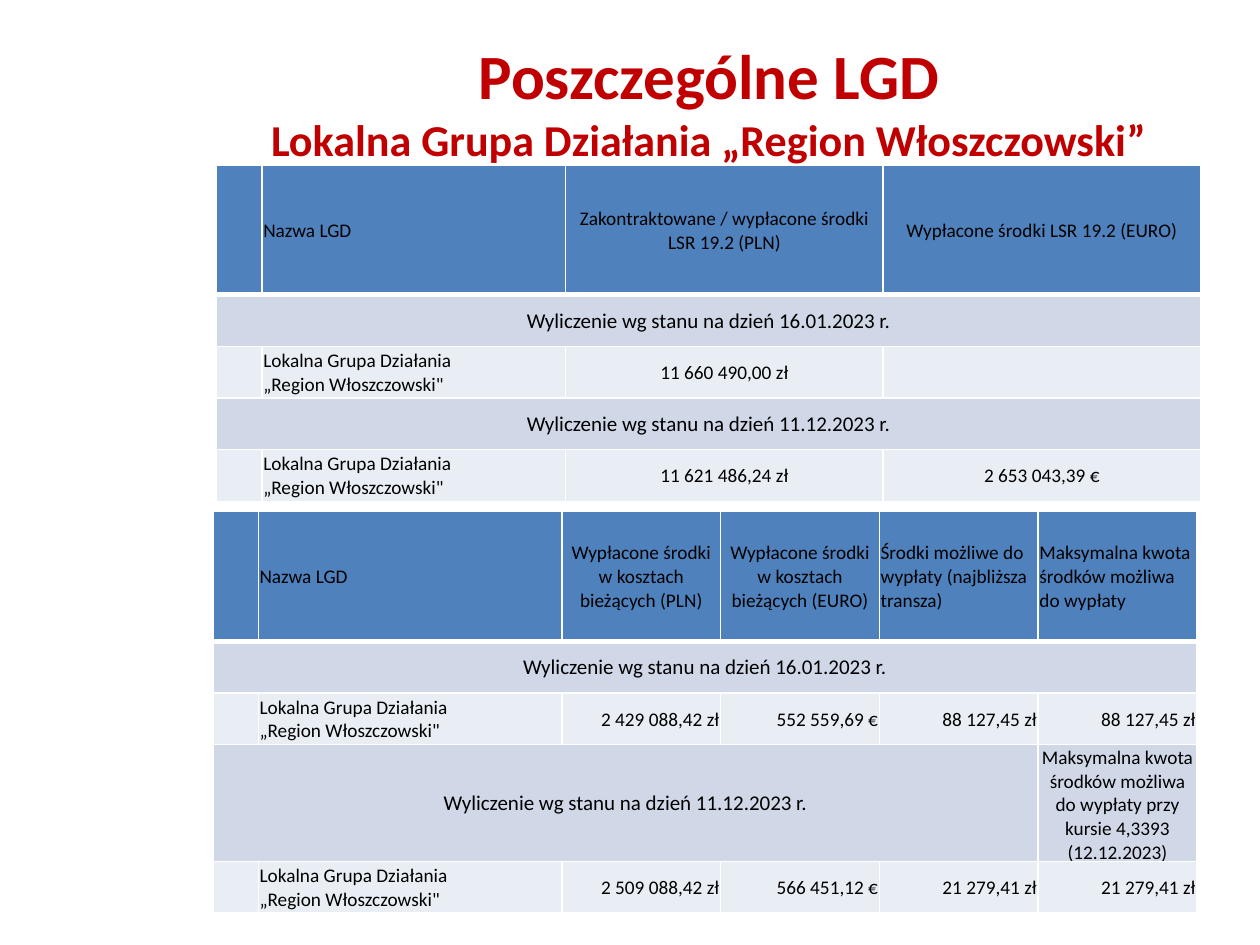
import pptx
import pptx.util
import pptx.dml.color
import pptx.enum.text
import pptx.oxml
import pptx.oxml.ns

Inches = pptx.util.Inches
RGBColor = pptx.dml.color.RGBColor
ANCHOR = pptx.enum.text.MSO_ANCHOR
ALIGN = {
    "l": pptx.enum.text.PP_ALIGN.LEFT,
    "c": pptx.enum.text.PP_ALIGN.CENTER,
    "r": pptx.enum.text.PP_ALIGN.RIGHT,
}
RED = RGBColor(0xC0, 0x00, 0x00)
BLACK = RGBColor(0x00, 0x00, 0x00)
WHITE = RGBColor(0xFF, 0xFF, 0xFF)
BLUE = RGBColor(0x4F, 0x81, 0xBD)
BAND = RGBColor(0xD0, 0xD8, 0xE8)
PALE = RGBColor(0xE9, 0xED, 0xF4)


def write(tf, text, size=11, align="l", color=BLACK, bold=False):
    for i, line in enumerate(text.split("\n")):
        p = tf.paragraphs[0] if i == 0 and not tf.text else tf.add_paragraph()
        p.alignment = ALIGN[align]
        p.font.size = pptx.util.Pt(size)
        if line:
            r = p.add_run()
            r.text = line
            r.font.name = "Calibri"
            r.font.size = pptx.util.Pt(size)
            r.font.bold = bold
            r.font.color.rgb = color


def style_cell(cell, fill, bottom):
    cell.fill.solid()
    cell.fill.fore_color.rgb = fill
    cell.vertical_anchor = ANCHOR.MIDDLE
    cell.margin_left = cell.margin_right = cell.margin_top = Inches(0.01)
    cell.margin_bottom = 0
    tcPr = cell._tc.get_or_add_tcPr()
    for i, (side, width) in enumerate([("L", 1), ("R", 1), ("T", 1), ("B", bottom)]):
        tcPr.insert(i, pptx.oxml.parse_xml(
            f'<a:ln{side} {pptx.oxml.ns.nsdecls("a")} w="{pptx.util.Pt(width)}">'
            f'<a:solidFill><a:srgbClr val="{WHITE}"/></a:solidFill></a:ln{side}>'))


prs = pptx.Presentation()
prs.slide_width, prs.slide_height = Inches(10), Inches(7.5)
s = prs.slides.add_slide(prs.slide_layouts[6])

title = s.shapes.add_textbox(Inches(1.33), Inches(0.13), Inches(8.59), Inches(1.18))
tf = title.text_frame
tf.word_wrap = True
tf.vertical_anchor = ANCHOR.BOTTOM
tf.margin_top = tf.margin_bottom = 0
write(tf, "Poszczególne LGD", size=36, align="c", color=RED, bold=True)
write(tf, "Lokalna Grupa Działania „Region Włoszczowski”", size=25.2, align="c", color=RED, bold=True)

GROUP = "Lokalna Grupa Działania\n„Region Włoszczowski\""
JANUARY = "Wyliczenie wg stanu na dzień 16.01.2023 r."
DECEMBER = "Wyliczenie wg stanu na dzień 11.12.2023 r."
MAX_RATE = "Maksymalna kwota środków możliwa do wypłaty przy kursie 4,3393 (12.12.2023)"

running_costs = [
    ["", "Nazwa LGD", "Wypłacone środki w kosztach bieżących (PLN)",
     "Wypłacone środki w kosztach bieżących (EURO)",
     "Środki możliwe do wypłaty (najbliższa transza)",
     "Maksymalna kwota środków możliwa do wypłaty"],
    [JANUARY],
    ["", GROUP, "2 429 088,42 zł", "552 559,69 €", "88 127,45 zł", "88 127,45 zł"],
    [DECEMBER, MAX_RATE],
    ["", GROUP, "2 509 088,42 zł", "566 451,12 €", "21 279,41 zł", "21 279,41 zł"],
]
contracted = [
    ["", "Nazwa LGD", "Zakontraktowane / wypłacone środki LSR 19.2 (PLN)",
     "Wypłacone środki LSR 19.2 (EURO)"],
    [JANUARY],
    ["", GROUP, "11 660 490,00 zł", ""],
    [DECEMBER],
    ["", GROUP, "11 621 486,24 zł", "2 653 043,39 €"],
]
ROW_HEIGHTS = [1.03, 0.41, 0.41, 0.41, 0.41]
tables = [
    (1.69, 4.06, 3.17, [0.36, 2.41] + [1.26] * 4, "llccll", "llrrrr", running_costs),
    (1.72, 1.31, 2.65, [0.36, 2.41] + [2.52] * 2, "llcc", "llcc", contracted),
]

for left, top, height, widths, head_align, data_align, rows in tables:
    n = len(widths)
    frame = s.shapes.add_table(len(rows), n, Inches(left), Inches(top), Inches(7.8), Inches(height))
    tbl = frame.table
    tbl.first_row = tbl.horz_banding = False
    for col, width in zip(tbl.columns, widths):
        col.width = Inches(width)
    for i, row in enumerate(rows):
        tbl.rows[i].height = Inches(ROW_HEIGHTS[i])
        is_band = i in (1, 3)
        fill = BLUE if i == 0 else BAND if is_band else PALE
        for cell in tbl.rows[i].cells:
            style_cell(cell, fill, 3 if i == 0 else 1)
        if is_band:
            span = n - len(row) + 1
            tbl.cell(i, 0).merge(tbl.cell(i, span - 1))
            write(tbl.cell(i, 0).text_frame, row[0], size=12, align="c")
            for j, text in enumerate(row[1:], span):
                write(tbl.cell(i, j).text_frame, text, align="c")
        else:
            for j, text in enumerate(row):
                align = (head_align if i == 0 else data_align)[j]
                write(tbl.cell(i, j).text_frame, text, align=align)

prs.save("out.pptx")
